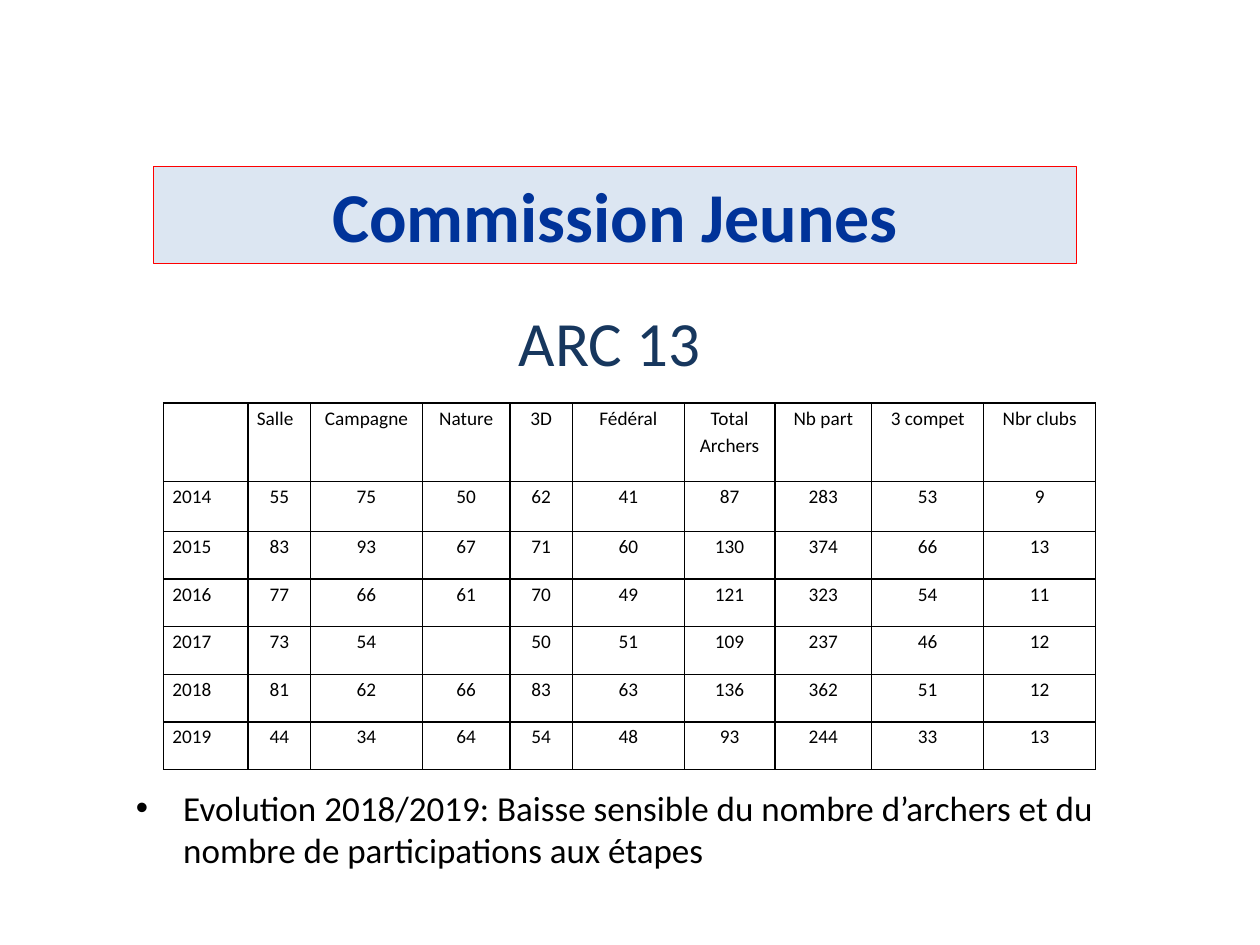
from lxml.etree import SubElement
from pptx import Presentation
from pptx.dml.color import RGBColor
from pptx.enum.shapes import MSO_SHAPE as Shape
from pptx.enum.text import MSO_ANCHOR as Anchor, PP_ALIGN as Align
from pptx.oxml.ns import qn
from pptx.util import Pt

BLACK = RGBColor(0, 0, 0)
RED = RGBColor(0xFF, 0, 0)
PALE_BLUE = RGBColor(0xDC, 0xE6, 0xF2)
ROYAL_BLUE = RGBColor(0, 0x33, 0x99)
NAVY = RGBColor(0x17, 0x37, 0x5E)


def write_text(frame, text, size, color=BLACK, bold=False, align=Align.LEFT, spacing=1.0, bullet=None):
    frame.word_wrap = True
    paragraph = frame.paragraphs[0]
    paragraph.alignment = align
    paragraph.line_spacing = spacing
    if bullet:
        properties = paragraph._p.get_or_add_pPr()
        properties.set("marL", str(Pt(27)))
        properties.set("indent", str(Pt(-27)))
        SubElement(properties, qn("a:buFont"), typeface="Arial")
        SubElement(properties, qn("a:buChar"), char=bullet)
    run = paragraph.add_run()
    run.text = text
    run.font.name = "Calibri"
    run.font.size = Pt(size)
    run.font.bold = bold
    run.font.color.rgb = color


def add_borders(cell, color, width):
    properties = cell._tc.get_or_add_tcPr()
    for side in ("a:lnL", "a:lnR", "a:lnT", "a:lnB"):
        line = SubElement(properties, qn(side), w=str(Pt(width)))
        fill = SubElement(line, qn("a:solidFill"))
        SubElement(fill, qn("a:srgbClr"), val=str(color))


presentation = Presentation()
presentation.slide_width, presentation.slide_height = Pt(720), Pt(540)
slide = presentation.slides.add_slide(presentation.slide_layouts[6])

subtitle = slide.shapes.add_textbox(Pt(87.8), Pt(139.7), Pt(513.4), Pt(85))
subtitle.text_frame.vertical_anchor = Anchor.BOTTOM
subtitle.text_frame.margin_bottom = Pt(8)
subtitle.text_frame.margin_left = Pt(15)
write_text(subtitle.text_frame, "ARC 13", 36, NAVY, align=Align.CENTER)

title = slide.shapes.add_shape(Shape.RECTANGLE, Pt(87.8), Pt(95), Pt(527.4), Pt(55.7))
title.shadow.inherit = False
title.fill.solid()
title.fill.fore_color.rgb = PALE_BLUE
title.line.color.rgb = RED
title.line.width = Pt(0.75)
title.text_frame.vertical_anchor = Anchor.TOP
write_text(title.text_frame, "Commission Jeunes", 40, ROYAL_BLUE, bold=True, align=Align.CENTER)

comment = slide.shapes.add_textbox(Pt(70.6), Pt(445.7), Pt(601.2), Pt(78.5))
write_text(
    comment.text_frame,
    "Evolution 2018/2019: Baisse sensible du nombre d’archers et du nombre de participations aux étapes",
    20,
    bullet="•",
)

results = [
    ["", "Salle", "Campagne", "Nature", "3D", "Fédéral", "Total Archers", "Nb part", "3 compet", "Nbr clubs"],
    ["2014", "55", "75", "50", "62", "41", "87", "283", "53", "9"],
    ["2015", "83", "93", "67", "71", "60", "130", "374", "66", "13"],
    ["2016", "77", "66", "61", "70", "49", "121", "323", "54", "11"],
    ["2017", "73", "54", "", "50", "51", "109", "237", "46", "12"],
    ["2018", "81", "62", "66", "83", "63", "136", "362", "51", "12"],
    ["2019", "44", "34", "64", "54", "48", "93", "244", "33", "13"],
]
column_widths = [48.3, 35.7, 64, 50, 35.7, 64, 51.7, 55.4, 64, 64]
row_heights = [44.8, 28.7] + [27.2] * 5
table = slide.shapes.add_table(
    len(results), len(column_widths), Pt(93.5), Pt(230.3), Pt(sum(column_widths)), Pt(sum(row_heights))
).table
table.first_row = table.horz_banding = False
for column, width in zip(table.columns, column_widths):
    column.width = Pt(width)
for row, height in zip(table.rows, row_heights):
    row.height = Pt(height)

for row_index, values in enumerate(results):
    for column_index, value in enumerate(values):
        cell = table.cell(row_index, column_index)
        cell.margin_left = cell.margin_right = Pt(5)
        cell.margin_top = cell.margin_bottom = Pt(0)
        add_borders(cell, BLACK, 1)
        cell.fill.background()
        if value:
            is_left = column_index == 0 or value == "Salle"
            align = Align.LEFT if is_left else Align.CENTER
            write_text(cell.text_frame, value, 11, align=align, spacing=1.15)

presentation.save("out.pptx")
